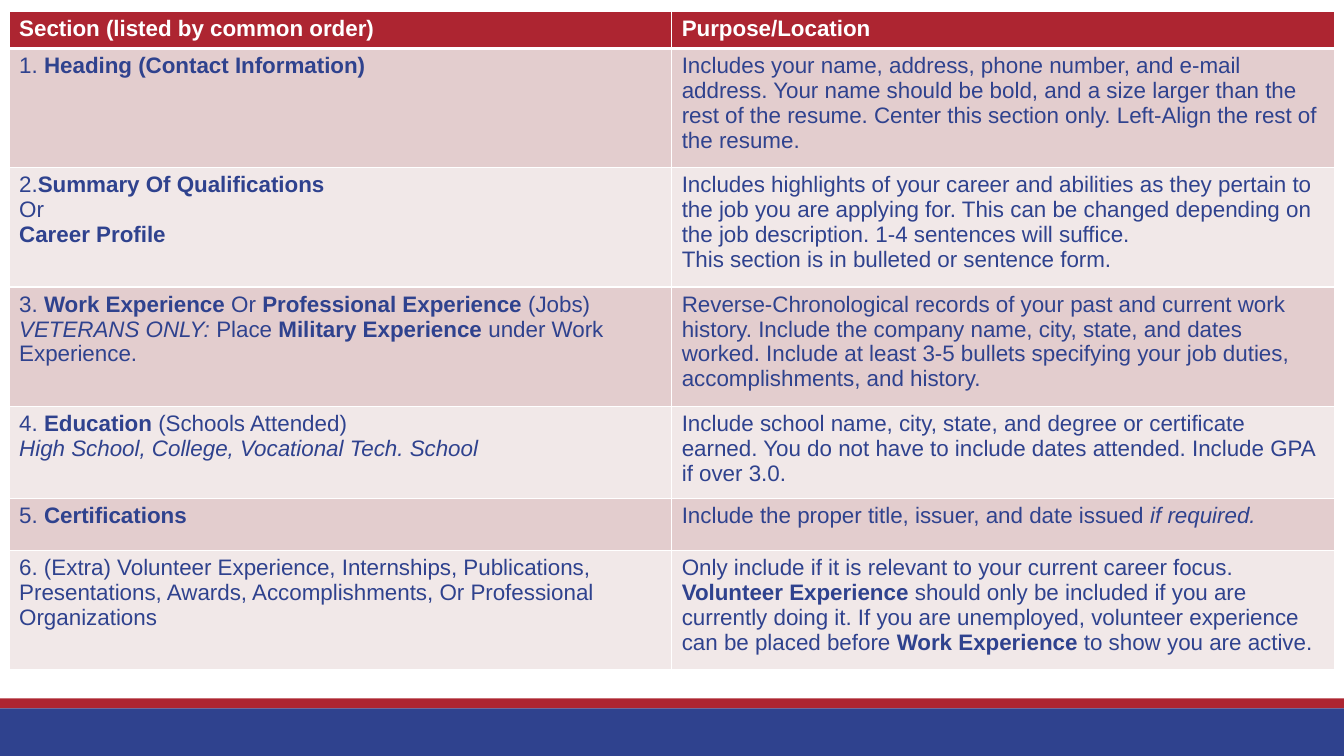
from dataclasses import dataclass
from typing import NamedTuple

from lxml.etree import SubElement
from pptx import Presentation
from pptx.dml.color import RGBColor
from pptx.enum.shapes import MSO_SHAPE
from pptx.oxml.ns import qn
from pptx.util import Emu, Inches, Pt


@dataclass(frozen=True)
class Theme:
    red: str = "AD2531"
    blue: str = "2F428E"
    white: str = "FFFFFF"
    row_tints: tuple[str, str] = ("E3CDCE", "F1E8E8")
    font: str = "Arial"
    text_size: int = 16
    border: int = 1
    header_border: int = 3


class Run(NamedTuple):
    text: str
    bold: bool = False
    italic: bool = False


class Band(NamedTuple):
    top: float
    height: float
    color: str


Paragraph = list[Run]
Cell = list[Paragraph]


class Row(NamedTuple):
    height: float
    section: Cell
    purpose: Cell


THEME = Theme()
WIDTH, HEIGHT = Inches(13.33), Inches(7.5)
LINE_BREAK = Run("\n")

# Lengths are percentages of the slide's width or height.
TABLE_LEFT, TABLE_TOP, COLUMN_WIDTH = 0.68, 1.47, 49.3
HEADER, TALL, MEDIUM, SHORT = 4.93, 15.78, 12.17, 6.95

BANDS = [Band(92.4, 1.3, THEME.red), Band(93.7, 6.3, THEME.blue)]


def bold(text: str) -> Run:
    return Run(text, bold=True)


def italic(text: str) -> Run:
    return Run(text, italic=True)


ROWS = [
    Row(HEADER, [[bold("Section (listed by common order)")]], [[bold("Purpose/Location")]]),
    Row(TALL,
        [[Run("1. "), bold("Heading (Contact Information)")]],
        [[Run("Includes your name, address, phone number, and e-mail address. Your name should be "
              "bold, and a size larger than the rest of the resume. Center this section only. "
              "Left-Align the rest of the resume.")]]),
    Row(TALL,
        [[Run("2."), bold("Summary Of Qualifications")], [Run("Or")], [bold("Career Profile")]],
        [[Run("Includes highlights of your career and abilities as they pertain to the job you are "
              "applying for. This can be changed depending on the job description. "
              "1-4 sentences will suffice."),
          LINE_BREAK,
          Run("This section is in bulleted or sentence form.")]]),
    Row(TALL,
        [[Run("3. "), bold("Work Experience "), Run("Or "), bold("Professional Experience "),
          Run("(Jobs)")],
         [italic("VETERANS ONLY: "), Run("Place "), bold("Military Experience "),
          Run("under Work Experience.")]],
        [[Run("Reverse-Chronological records of your past and current work history. Include the "
              "company name, city, state, and dates worked. Include at least 3-5 bullets "
              "specifying your job duties, accomplishments, and history.")]]),
    Row(MEDIUM,
        [[Run("4. "), bold("Education"), Run(" (Schools Attended)"), LINE_BREAK,
          italic("High School, College, Vocational Tech. School")]],
        [[Run("Include school name, city, state, and degree or certificate earned. You do not "
              "have to include dates attended. Include GPA if over 3.0.")]]),
    Row(SHORT,
        [[Run("5. "), bold("Certifications")]],
        [[Run("Include the proper title, issuer, and date issued "), italic("if required.")]]),
    Row(TALL,
        [[Run("6. (Extra) Volunteer Experience, Internships, Publications, Presentations, Awards, "
              "Accomplishments, Or Professional Organizations")]],
        [[Run("Only include if it is relevant to your current career focus. "),
          bold("Volunteer Experience "),
          Run("should only be included if you are currently doing it. If you are unemployed, "
              "volunteer experience can be placed before "),
          bold("Work Experience "), Run("to show you are active.")]]),
]


def across(percent: float) -> Emu:
    return Emu(round(WIDTH * percent / 100))


def down(percent: float) -> Emu:
    return Emu(round(HEIGHT * percent / 100))


def paint(fill, color: str) -> None:
    fill.solid()
    fill.fore_color.rgb = RGBColor.from_string(color)


def add_band(slide, band: Band) -> None:
    shape = slide.shapes.add_shape(
        MSO_SHAPE.RECTANGLE, 0, down(band.top), WIDTH, down(band.height))
    shape.shadow.inherit = False
    shape.line.fill.background()
    paint(shape.fill, band.color)


def add_borders(cell, top: int, bottom: int) -> None:
    properties = cell._tc.get_or_add_tcPr()
    widths = {"a:lnL": THEME.border, "a:lnR": THEME.border, "a:lnT": top, "a:lnB": bottom}
    for tag, width in widths.items():
        line = SubElement(properties, qn(tag), w=str(Pt(width)))
        fill = SubElement(line, qn("a:solidFill"))
        SubElement(fill, qn("a:srgbClr"), val=THEME.white)


def write_cell(cell, content: Cell, color: str) -> None:
    frame = cell.text_frame
    for index, runs in enumerate(content):
        paragraph = frame.add_paragraph() if index else frame.paragraphs[0]
        for part in runs:
            if part == LINE_BREAK:
                paragraph.add_line_break()
                continue
            run = paragraph.add_run()
            run.text = part.text
            run.font.color.rgb = RGBColor.from_string(color)
            formats = {"name": THEME.font, "size": Pt(THEME.text_size),
                       "bold": part.bold, "italic": part.italic}
            for name, value in formats.items():
                setattr(run.font, name, value)


def add_section_table(slide, rows: list[Row]) -> None:
    table = slide.shapes.add_table(
        len(rows), 2, across(TABLE_LEFT), down(TABLE_TOP),
        across(2 * COLUMN_WIDTH), down(sum(row.height for row in rows))).table
    for column in table.columns:
        column.width = across(COLUMN_WIDTH)
    for index, row in enumerate(rows):
        table.rows[index].height = down(row.height)
        fill = THEME.row_tints[(index - 1) % 2] if index else THEME.red
        top = THEME.header_border if index == 1 else THEME.border
        bottom = THEME.border if index else THEME.header_border
        for column_index, content in enumerate((row.section, row.purpose)):
            cell = table.cell(index, column_index)
            add_borders(cell, top, bottom)
            paint(cell.fill, fill)
            write_cell(cell, content, THEME.blue if index else THEME.white)


def main() -> None:
    presentation = Presentation()
    presentation.slide_width, presentation.slide_height = WIDTH, HEIGHT
    slide = presentation.slides.add_slide(presentation.slide_layouts[6])
    for band in BANDS:
        add_band(slide, band)
    add_section_table(slide, ROWS)
    presentation.save("out.pptx")


if __name__ == "__main__":
    main()
